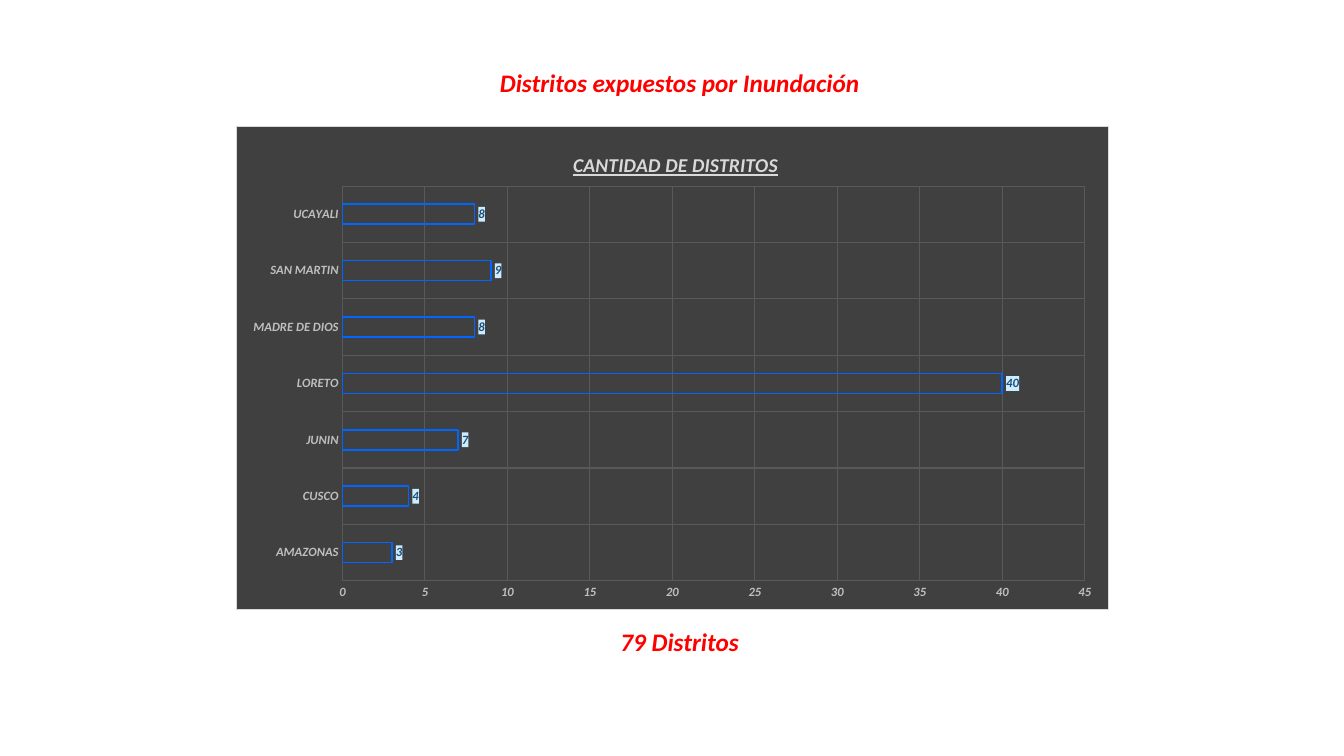
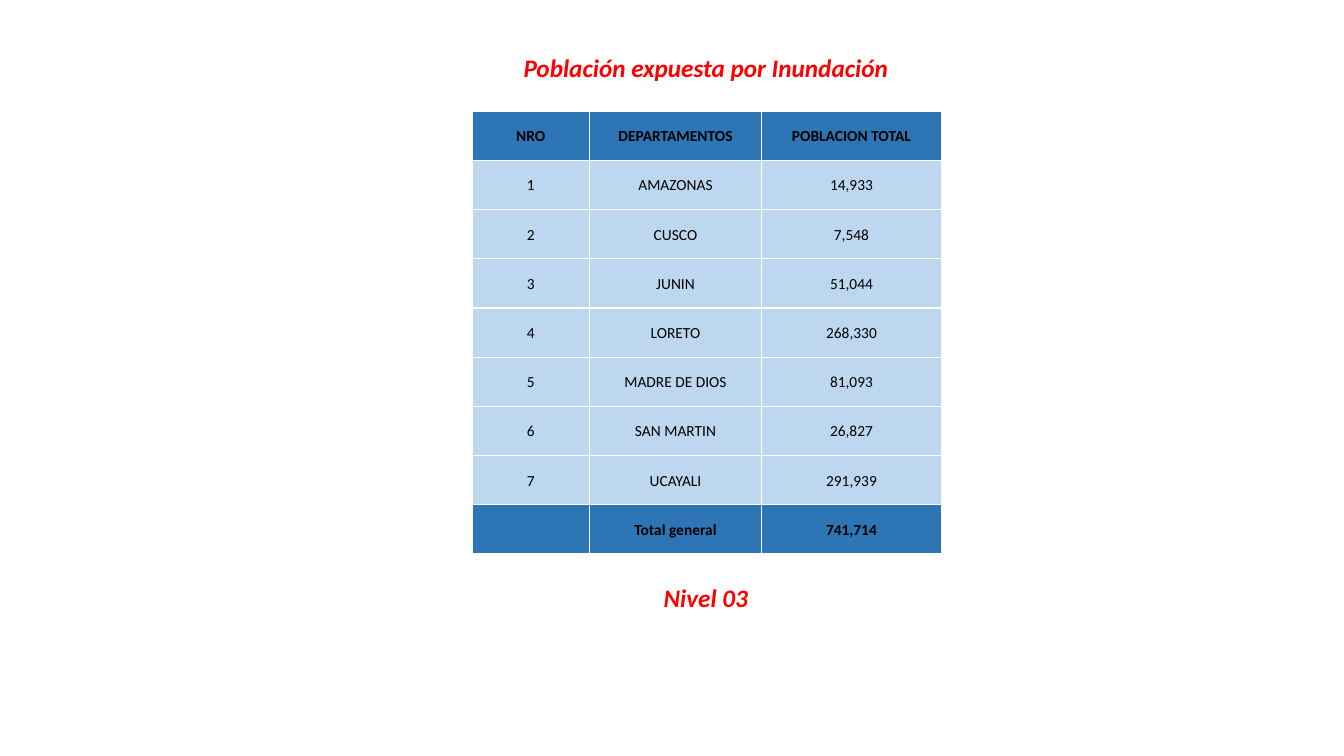
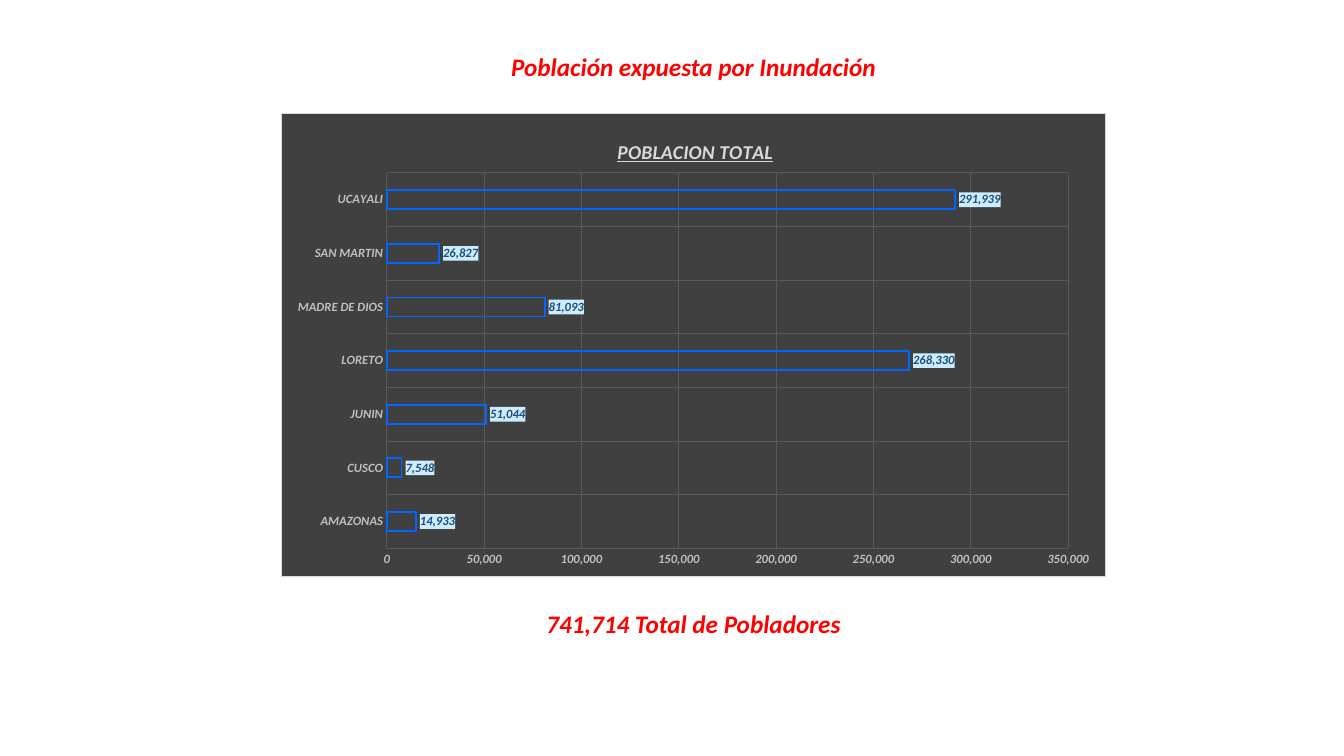
"""Build three slides on the districts and population exposed to flooding."""
import pptx
import pptx.chart.data
import pptx.dml.color
import pptx.enum.chart
import pptx.enum.text
import pptx.oxml
import pptx.oxml.ns
import pptx.util

Cm = pptx.util.Cm
Pt = pptx.util.Pt
RGBColor = pptx.dml.color.RGBColor

FONT = "Calibri"
RED = RGBColor(0xFF, 0x00, 0x00)
BLACK = RGBColor(0x00, 0x00, 0x00)
WHITE = RGBColor(0xFF, 0xFF, 0xFF)
HEADER_BLUE = RGBColor(0x2E, 0x75, 0xB6)
ROW_BLUE = RGBColor(0xBD, 0xD7, 0xEE)
CHART_GREY = RGBColor(0x40, 0x40, 0x40)
GRID_GREY = RGBColor(0x59, 0x59, 0x59)
AXIS_GREY = RGBColor(0xBF, 0xBF, 0xBF)
LIGHT_GREY = RGBColor(0xD9, 0xD9, 0xD9)
BAR_BLUE = RGBColor(0x00, 0x66, 0xFF)
LABEL_BLUE = RGBColor(0x1F, 0x4E, 0x79)
LABEL_FILL = RGBColor(0xCC, 0xEC, 0xFF)

NUMBER_FORMAT = "#,##0"
HEADING_WIDTH = 11
HEADING_HEIGHT = 1.02
PLOT_LEFT, PLOT_TOP, PLOT_BOTTOM = 2.67, 1.5, 0.72
CHART_TITLE_LEFT, CHART_TITLE_TOP = 8.4, 0.53

DEPARTMENTS = ["AMAZONAS", "CUSCO", "JUNIN", "LORETO", "MADRE DE DIOS", "SAN MARTIN", "UCAYALI"]
DISTRICTS = [3, 4, 7, 40, 8, 9, 8]
POPULATION = [14933, 7548, 51044, 268330, 81093, 26827, 291939]


def style_font(font, size, color, bold=True, italic=True):
    """Apply the deck's typeface and the given look to a font."""
    font.name = FONT
    font.size = Pt(size)
    font.bold = bold
    font.italic = italic
    font.color.rgb = color


def write_heading(shape, text, center, top):
    """Place a red heading centred on a horizontal position."""
    shape.left, shape.top = Cm(center - HEADING_WIDTH / 2), Cm(top)
    shape.width, shape.height = Cm(HEADING_WIDTH), Cm(HEADING_HEIGHT)
    frame = shape.text_frame
    frame.word_wrap = True
    frame.auto_size = pptx.enum.text.MSO_AUTO_SIZE.NONE
    frame.vertical_anchor = pptx.enum.text.MSO_ANCHOR.MIDDLE
    frame.text = text
    paragraph = frame.paragraphs[0]
    paragraph.alignment = pptx.enum.text.PP_ALIGN.CENTER
    style_font(paragraph.font, 18, RED)


def add_headed_slide(presentation, center, title, title_top, caption, caption_top):
    """Add a slide with a title above and a caption below its content."""
    slide = presentation.slides.add_slide(presentation.slide_layouts[5])
    write_heading(slide.shapes.title, title, center, title_top)
    caption_box = slide.shapes.add_textbox(0, 0, 0, 0)
    write_heading(caption_box, caption, center, caption_top)
    return slide


def chart_xml(text):
    """Parse chart XML with the chart and drawing namespaces declared."""
    head, tail = text.split(">", 1)
    return pptx.oxml.parse_xml(f"{head} {pptx.oxml.ns.nsdecls('c', 'a')}>{tail}")


def solid_xml(color):
    """Return the XML of a solid fill."""
    return f'<a:solidFill><a:srgbClr val="{color}"/></a:solidFill>'


def set_layout(element, index, target, **fractions):
    """Give a chart part a manual layout in fractions of the chart."""
    for old_layout in element.findall(pptx.oxml.ns.qn("c:layout")):
        element.remove(old_layout)
    values = "".join(f'<c:{name} val="{value:.4f}"/>' for name, value in fractions.items())
    element.insert(index, chart_xml(
        f"<c:layout><c:manualLayout>{target}"
        f'<c:xMode val="edge"/><c:yMode val="edge"/>{values}</c:manualLayout></c:layout>'))


def style_axis(axis):
    """Show grey labels and gridlines without ticks or an axis line."""
    axis.major_tick_mark = pptx.enum.chart.XL_TICK_MARK.NONE
    axis.minor_tick_mark = pptx.enum.chart.XL_TICK_MARK.NONE
    axis.format.line.fill.background()
    axis.has_major_gridlines = True
    axis.major_gridlines.format.line.color.rgb = GRID_GREY
    axis.major_gridlines.format.line.width = Pt(0.75)
    style_font(axis.tick_labels.font, 9, AXIS_GREY)


def style_bars(plot):
    """Outline the bars and label their ends."""
    plot.gap_width = 182
    plot.overlap = -50
    plot.vary_by_categories = False
    series = plot.series[0]
    series.format.fill.background()
    series.format.line.color.rgb = BAR_BLUE
    series.format.line.width = Pt(1.25)
    labels = series.data_labels
    labels.show_value = True
    labels.number_format = NUMBER_FORMAT
    labels.number_format_is_linked = False
    labels.position = pptx.enum.chart.XL_LABEL_POSITION.OUTSIDE_END
    style_font(labels.font, 9, LABEL_BLUE)
    text_properties = labels._element.find(pptx.oxml.ns.qn("c:txPr"))
    text_properties.addprevious(chart_xml(f"<c:spPr>{solid_xml(LABEL_FILL)}</c:spPr>"))


def add_bar_chart(slide, title, values, box, maximum, step, plot_right):
    """Add a dark bar chart with one bar for each department."""
    left, top, width, height = box
    data = pptx.chart.data.CategoryChartData(number_format=NUMBER_FORMAT)
    data.categories = DEPARTMENTS
    data.add_series(title, values)
    chart = slide.shapes.add_chart(
        pptx.enum.chart.XL_CHART_TYPE.BAR_CLUSTERED,
        Cm(left), Cm(top), Cm(width), Cm(height), data).chart
    chart.has_legend = False
    style_font(chart.font, 10, BLACK, bold=False, italic=False)
    text_properties = chart._chartSpace.find(pptx.oxml.ns.qn("c:txPr"))
    text_properties.addprevious(chart_xml(
        f"<c:spPr>{solid_xml(CHART_GREY)}"
        f'<a:ln w="{Pt(0.75)}">{solid_xml(LIGHT_GREY)}</a:ln></c:spPr>'))

    chart.has_title = True
    run = chart.chart_title.text_frame.paragraphs[0].add_run()
    run.text = title
    style_font(run.font, 14, LIGHT_GREY)
    run.font.underline = True
    set_layout(chart.chart_title._element, 1, "",
               x=CHART_TITLE_LEFT / width, y=CHART_TITLE_TOP / height)

    style_axis(chart.category_axis)
    style_axis(chart.value_axis)
    chart.value_axis.minimum_scale = 0
    chart.value_axis.maximum_scale = maximum
    chart.value_axis.major_unit = step
    chart.value_axis.tick_labels.number_format = NUMBER_FORMAT
    chart.value_axis.tick_labels.number_format_is_linked = False
    style_bars(chart.plots[0])
    plot_area = chart._chartSpace.chart.plotArea
    set_layout(plot_area, 0, '<c:layoutTarget val="inner"/>',
               x=PLOT_LEFT / width, y=PLOT_TOP / height,
               w=(width - PLOT_LEFT - plot_right) / width,
               h=(height - PLOT_TOP - PLOT_BOTTOM) / height)


def style_cell(cell, text, emphasized):
    """Fill a table cell and give it centred text and white borders."""
    cell.fill.solid()
    cell.fill.fore_color.rgb = HEADER_BLUE if emphasized else ROW_BLUE
    cell.vertical_anchor = pptx.enum.text.MSO_ANCHOR.MIDDLE
    cell.margin_left = cell.margin_right = cell.margin_top = Cm(0.03)
    cell.margin_bottom = 0
    cell.text = text
    paragraph = cell.text_frame.paragraphs[0]
    paragraph.alignment = pptx.enum.text.PP_ALIGN.CENTER
    style_font(paragraph.font, 11, BLACK, bold=emphasized, italic=False)
    properties = cell._tc.get_or_add_tcPr()
    for index, side in enumerate(("lnL", "lnR", "lnT", "lnB")):
        properties.insert(index, chart_xml(
            f'<a:{side} w="{Pt(1)}">{solid_xml(WHITE)}</a:{side}>'))


def add_population_table(slide, left, top, column_widths, row_height):
    """Add the table of departments with its header and total."""
    rows = [("NRO", "DEPARTAMENTOS", "POBLACION TOTAL")]
    for number, (department, people) in enumerate(zip(DEPARTMENTS, POPULATION), start=1):
        rows.append((str(number), department, f"{people:,}"))
    rows.append(("", "Total general", f"{sum(POPULATION):,}"))
    table = slide.shapes.add_table(
        len(rows), len(column_widths), Cm(left), Cm(top),
        Cm(sum(column_widths)), Cm(row_height * len(rows))).table
    for column, width in zip(table.columns, column_widths):
        column.width = Cm(width)
    for row_index, texts in enumerate(rows):
        table.rows[row_index].height = Cm(row_height)
        emphasized = row_index in (0, len(rows) - 1)
        for column_index, text in enumerate(texts):
            style_cell(table.cell(row_index, column_index), text, emphasized)


def main():
    """Build and save the presentation."""
    presentation = pptx.Presentation()
    presentation.slide_width = Cm(33.87)
    presentation.slide_height = Cm(19.05)

    slide = add_headed_slide(presentation, 17.13, "Distritos expuestos por Inundación", 1.57,
                             f"{sum(DISTRICTS)} Distritos", 15.65)
    add_bar_chart(slide, "CANTIDAD DE DISTRITOS", DISTRICTS, (5.95, 3.18, 22, 12.19),
                  maximum=45, step=5, plot_right=0.6)

    slide = add_headed_slide(presentation, 17.79, "Población expuesta por Inundación", 1.19,
                             "Nivel 03", 14.55)
    add_population_table(slide, 11.9, 2.8, (2.95, 4.35, 4.52), 1.24)

    slide = add_headed_slide(presentation, 17.48, "Población expuesta por Inundación", 1.17,
                             f"{sum(POPULATION):,} Total de Pobladores", 15.21)
    add_bar_chart(slide, "POBLACION TOTAL", POPULATION, (7.07, 2.85, 20.8, 11.7),
                  maximum=350000, step=50000, plot_right=0.94)

    presentation.save("out.pptx")


if __name__ == "__main__":
    main()
